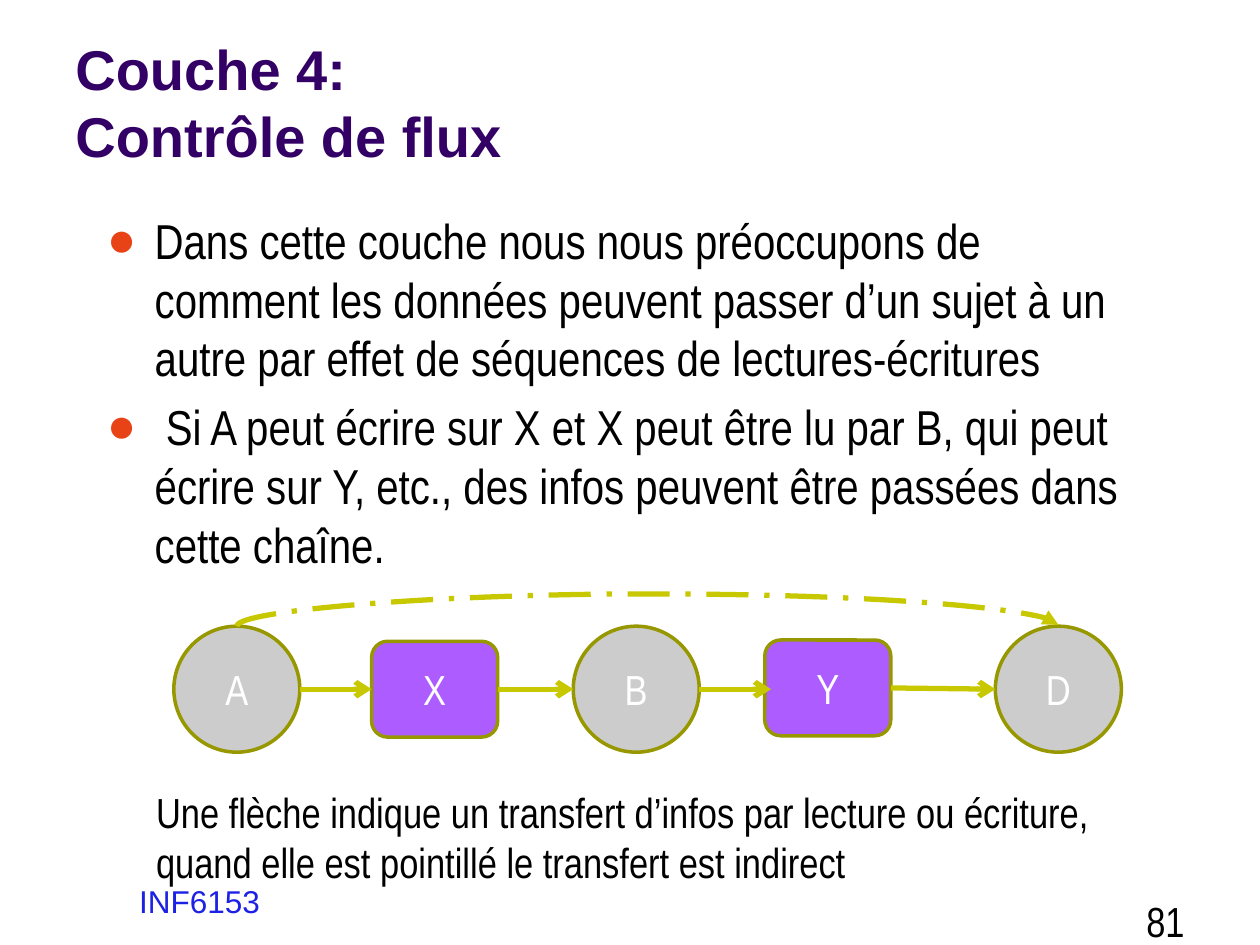
from dataclasses import dataclass

from lxml import etree
from pptx import Presentation
from pptx import util as u
from pptx.dml.color import RGBColor
from pptx.enum import dml, shapes, text
from pptx.oxml.ns import qn


@dataclass(frozen=True)
class Theme:
    heading_font: str = "Arial"
    body_font: str = "Arial Narrow"
    title: str = "330066"
    ink: str = "000000"
    bullet: str = "E84316"
    footer: str = "1C21E4"
    subject: str = "CCCCCC"
    data: str = "AD5CFF"
    outline: str = "979700"
    arrow: str = "C8C800"
    label: str = "FFFFFF"
    title_size: int = 32
    body_size: int = 28
    note_size: int = 24
    footer_size: int = 18


def rgb(value):
    return RGBColor.from_string(value)


class Deck:
    def __init__(self, theme):
        self.theme = theme
        self.prs = Presentation()
        self.prs.slide_width = u.Inches(10)
        self.prs.slide_height = u.Inches(7.5)
        self.s = self.prs.slides.add_slide(self.prs.slide_layouts[6])

    def style(self, tf, size, color, font=None, bold=False, align=text.PP_ALIGN.LEFT):
        for p in tf.paragraphs:
            p.alignment = align
            for r in p.runs:
                r.font.name = font or self.theme.body_font
                r.font.size = u.Pt(size)
                r.font.bold = bold
                r.font.color.rgb = rgb(color)

    def text(self, box, words, size, color, anchor=text.MSO_ANCHOR.TOP, **style):
        sp = self.s.shapes.add_textbox(*map(u.Inches, box))
        tf = sp.text_frame
        tf.word_wrap = True
        tf.vertical_anchor = anchor
        tf.text = words
        self.style(tf, size, color, **style)
        return tf

    def bullets(self, box, items):
        t = self.theme
        tf = self.text(box, "\n".join(items), t.body_size, t.ink)
        for p in tf.paragraphs:
            p.space_before = u.Pt(0.2 * t.body_size)
            pPr = p._p.get_or_add_pPr()
            pPr.set("marL", str(u.Inches(0.38)))
            pPr.set("indent", str(u.Inches(-0.38)))
            color = etree.SubElement(pPr, qn("a:buClr"))
            etree.SubElement(color, qn("a:srgbClr"), val=t.bullet)
            etree.SubElement(pPr, qn("a:buFont"), typeface=t.heading_font)
            etree.SubElement(pPr, qn("a:buChar"), char="●")

    def node(self, kind, box, label, fill):
        t = self.theme
        sp = self.s.shapes.add_shape(kind, *map(u.Inches, box))
        sp.shadow.inherit = False
        sp.fill.solid()
        sp.fill.fore_color.rgb = rgb(fill)
        sp.line.color.rgb = rgb(t.outline)
        sp.line.width = u.Pt(2)
        tf = sp.text_frame
        tf.vertical_anchor = text.MSO_ANCHOR.MIDDLE
        tf.text = label
        self.style(tf, t.note_size, t.label, align=text.PP_ALIGN.CENTER)
        return sp

    def subject(self, left, label):
        return self.node(shapes.MSO_SHAPE.OVAL, (left, 4.97, 1, 1), label, self.theme.subject)

    def data(self, left, top, label):
        box = (left, top, 1, 0.76)
        return self.node(shapes.MSO_SHAPE.ROUNDED_RECTANGLE, box, label, self.theme.data)

    def arrow(self, start, end, kind=shapes.MSO_CONNECTOR.STRAIGHT, head="arrow"):
        cn = self.s.shapes.add_connector(kind, *map(u.Inches, (*start, *end)))
        cn.line.color.rgb = rgb(self.theme.arrow)
        cn.line.width = u.Pt(3)
        etree.SubElement(cn.line._get_or_add_ln(), qn("a:tailEnd"), type=head)
        etree.SubElement(cn._element.spPr, qn("a:effectLst"))
        return cn

    def arc(self, start, end, rise):
        (x1, y1), (x2, y2) = start, end
        cx, cy = (x1 + x2) / 2, (y1 + y2) / 2
        depth, span = y1 - y2, x2 - x1
        cn = self.arrow(
            (cx + depth / 2, cy + span / 2),
            (cx - depth / 2, cy - span / 2),
            shapes.MSO_CONNECTOR.CURVE,
            "triangle",
        )
        cn.line.dash_style = dml.MSO_LINE.LONG_DASH_DOT
        spPr = cn._element.spPr
        spPr.find(qn("a:xfrm")).set("rot", str(90 * 60000))
        guides = spPr.find(qn("a:prstGeom")).find(qn("a:avLst"))
        ratio = round(rise / depth * 100000)
        etree.SubElement(guides, qn("a:gd"), name="adj1", fmla=f"val {ratio}")


def main():
    t = Theme()
    deck = Deck(t)
    deck.text((0.5, -0.03, 9.5, 1.42), "Couche 4:\vContrôle de flux", t.title_size, t.title,
              anchor=text.MSO_ANCHOR.BOTTOM, font=t.heading_font, bold=True)
    deck.bullets((0.75, 1.62, 8.5, 3), [
        "Dans cette couche nous nous préoccupons de comment les données peuvent passer "
        "d’un sujet à un autre par effet de séquences de lectures-écritures",
        " Si A peut écrire sur X et X peut être lu par B, qui peut écrire sur Y, etc., "
        "des infos peuvent être passées dans cette chaîne.",
    ])

    for left, label in ((1.38, "A"), (4.55, "B"), (7.9, "D")):
        deck.subject(left, label)
    x = deck.data(2.95, 5.09, "X")
    y = deck.data(6.07, 5.08, "Y")

    mid = 5.47
    deck.arrow((2.38, mid), (2.95, mid)).end_connect(x, 1)
    deck.arrow((3.95, mid), (4.55, mid)).begin_connect(x, 3)
    deck.arrow((5.55, mid), (6.12, mid))
    deck.arrow((7.07, mid), (7.9, mid)).begin_connect(y, 3)
    deck.arc((1.88, 4.97), (8.4, 4.96), 0.26)

    deck.text((1.14, 6.19, 8.04, 0.91),
              "Une flèche indique un transfert d’infos par lecture ou écriture, "
              "quand elle est pointillé le transfert est indirect", t.note_size, t.ink)
    deck.text((0, 6.95, 3.17, 0.5), "INF6153", t.footer_size, t.footer,
              font=t.heading_font, align=text.PP_ALIGN.CENTER)
    deck.text((7.17, 7.06, 2.33, 0.58), "81", t.note_size, t.ink, align=text.PP_ALIGN.RIGHT)
    deck.prs.save("out.pptx")


if __name__ == "__main__":
    main()
